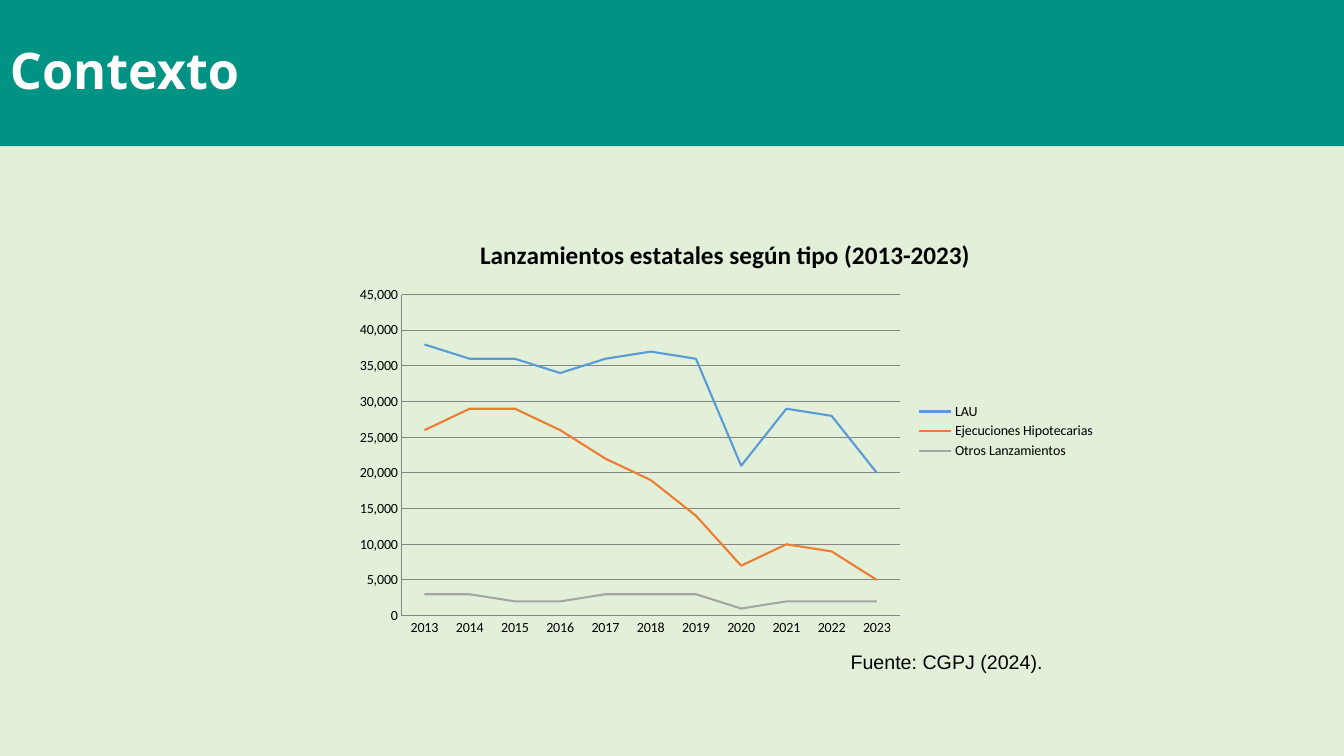
from pptx import Presentation
from pptx import util as u
from pptx.chart import data as chart_data
from pptx.dml.color import RGBColor
from pptx.enum import chart as ch, shapes, text

Pt = u.Pt
PALE_GREEN = RGBColor(0xE2, 0xF0, 0xD9)
TEAL = RGBColor(0x00, 0x93, 0x83)
WHITE = RGBColor(0xFF, 0xFF, 0xFF)
BLACK = RGBColor(0x00, 0x00, 0x00)
GRID_GREY = RGBColor(0x86, 0x86, 0x86)
BLUE = RGBColor(0x5B, 0x9B, 0xD5)
ORANGE = RGBColor(0xED, 0x7D, 0x31)
GREY = RGBColor(0xA5, 0xA5, 0xA5)

YEARS = [str(year) for year in range(2013, 2024)]
# Evictions by type: name, line colour, yearly values in thousands
EVICTIONS = [
    ("LAU", BLUE, [38, 36, 36, 34, 36, 37, 36, 21, 29, 28, 20]),
    ("Ejecuciones Hipotecarias", ORANGE,
     [26, 29, 29, 26, 22, 19, 14, 7, 10, 9, 5]),
    ("Otros Lanzamientos", GREY, [3, 3, 2, 2, 3, 3, 3, 1, 2, 2, 2]),
]


def set_font(font, name, size, color, bold=False):
    font.name = name
    font.size = Pt(size)
    font.bold = bold
    font.color.rgb = color


def add_banner(page, wording, width, height):
    banner = page.shapes.add_shape(
        shapes.MSO_SHAPE.RECTANGLE, 0, 0, width, height)
    banner.shadow.inherit = False
    banner.fill.solid()
    banner.fill.fore_color.rgb = TEAL
    banner.line.fill.background()
    frame = banner.text_frame
    frame.vertical_anchor = text.MSO_ANCHOR.MIDDLE
    para = frame.paragraphs[0]
    para.text = wording
    para.alignment = text.PP_ALIGN.LEFT
    para.line_spacing = 0.9
    set_font(para.font, "Open Sans", 36, WHITE, bold=True)


def add_source_note(page, wording, left, top, width, height):
    box = page.shapes.add_textbox(Pt(left), Pt(top), Pt(width), Pt(height))
    box.text_frame.word_wrap = True
    para = box.text_frame.paragraphs[0]
    para.text = wording
    set_font(para.font, "Arial", 14, BLACK)


def style_line(line, color, width):
    line.color.rgb = color
    line.width = Pt(width)


def style_axis(axis):
    axis.major_tick_mark = ch.XL_TICK_MARK.NONE
    axis.minor_tick_mark = ch.XL_TICK_MARK.NONE
    style_line(axis.format.line, GRID_GREY, 0.75)


def add_line_chart(page, title, left, top, width, height):
    data = chart_data.CategoryChartData(number_format="#,##0")
    data.categories = YEARS
    for name, _, thousands in EVICTIONS:
        data.add_series(name, [1000 * value for value in thousands])
    chart = page.shapes.add_chart(
        ch.XL_CHART_TYPE.LINE, Pt(left), Pt(top), Pt(width), Pt(height),
        data).chart
    set_font(chart.font, "Calibri", 10, BLACK)

    # Title and legend
    chart.has_title = True
    para = chart.chart_title.text_frame.paragraphs[0]
    para.text = title
    set_font(para.font, "Calibri", 18, BLACK, bold=True)
    chart.has_legend = True
    chart.legend.position = ch.XL_LEGEND_POSITION.RIGHT
    chart.legend.include_in_layout = False

    # Axes and gridlines
    style_axis(chart.category_axis)
    values_axis = chart.value_axis
    style_axis(values_axis)
    values_axis.minimum_scale = 0
    values_axis.maximum_scale = 45000
    values_axis.major_unit = 5000
    values_axis.tick_labels.number_format = "#,##0"
    values_axis.tick_labels.number_format_is_linked = False
    style_line(values_axis.major_gridlines.format.line, GRID_GREY, 0.75)

    # Series lines
    chart.plots[0].vary_by_categories = False
    for series, (_, color, _) in zip(chart.plots[0].series, EVICTIONS):
        series.smooth = False
        series.marker.style = ch.XL_MARKER_STYLE.NONE
        style_line(series.format.line, color, 1.5)


def main():
    deck = Presentation()
    deck.slide_width, deck.slide_height = Pt(960), Pt(540)
    page = deck.slides.add_slide(deck.slide_layouts[6])
    page.background.fill.solid()
    page.background.fill.fore_color.rgb = PALE_GREEN

    add_banner(page, "Contexto", deck.slide_width, Pt(104.4))
    add_source_note(page, "Fuente: CGPJ (2024).", 600.5, 460.8, 234, 24.5)
    add_line_chart(page, "Lanzamientos estatales según tipo (2013-2023)",
                   246.2, 156.2, 543.6, 303.8)
    deck.save("out.pptx")


if __name__ == "__main__":
    main()
